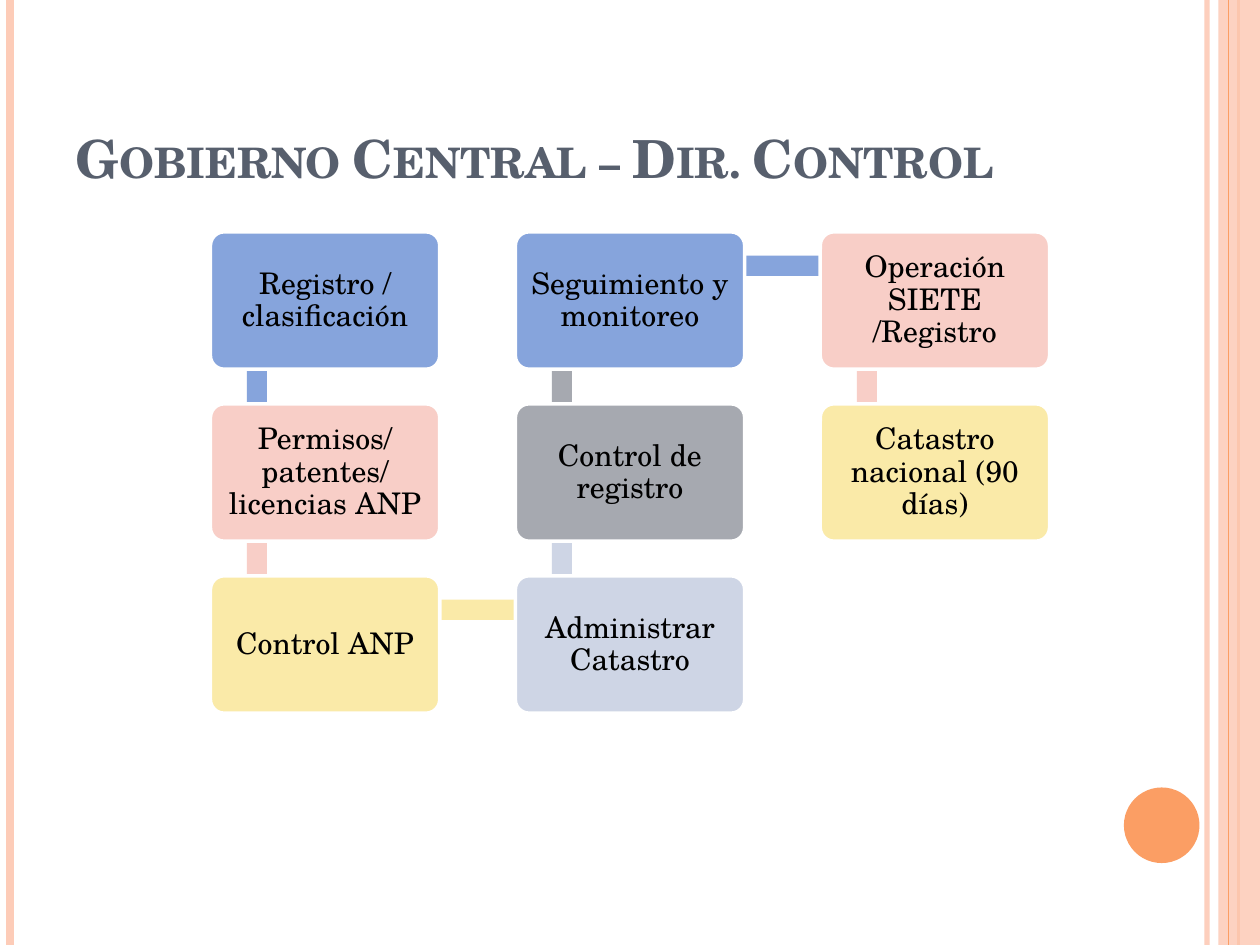
from lxml import etree
from pptx import Presentation
from pptx import util as u
from pptx.dml.color import RGBColor
from pptx.enum import shapes, text
from pptx.oxml.ns import qn

FONT = "TeX Gyre Schola"
PEACH = RGBColor(0xFD, 0xCC, 0xB8)
ORANGE = RGBColor(0xFB, 0x9E, 0x64)
SLATE = RGBColor(0x57, 0x5F, 0x6D)
BLACK = RGBColor(0, 0, 0)
WHITE = RGBColor(0xFF, 0xFF, 0xFF)
BLUE = RGBColor(0x86, 0xA4, 0xDC)
PINK = RGBColor(0xF8, 0xCE, 0xC7)
YELLOW = RGBColor(0xFA, 0xEA, 0xA8)
PALE = RGBColor(0xCE, 0xD5, 0xE5)
GREY = RGBColor(0xA6, 0xA9, 0xB0)

prs = Presentation()
prs.slide_width, prs.slide_height = u.Inches(10), u.Inches(7.5)
s = prs.slides.add_slide(prs.slide_layouts[6])


def add_filled(kind, x, y, w, h, color):
    """Add a flat preset shape without outline, measured in inches."""
    sp = s.shapes.add_shape(kind, *map(u.Inches, (x, y, w, h)))
    sp.shadow.inherit = False
    sp.fill.solid()
    sp.fill.fore_color.rgb = color
    sp.line.fill.background()
    return sp


def set_alpha(fill_parent, percent):
    """Make the solid fill directly under fill_parent partly transparent."""
    clr = fill_parent.find(qn("a:solidFill"))[0]
    etree.SubElement(clr, qn("a:alpha")).set("val", str(percent * 1000))


# Side stripes: the band lies between the two orange lines
for x, color, width, alpha in [(9.58, PEACH, 3, 93), (0.08, PEACH, 4.5, 100),
                               (9.83, ORANGE, 1.5, 100), (None, PEACH, 0, 87),
                               (9.75, ORANGE, 0.75, 100)]:
    if x is None:
        band = add_filled(shapes.MSO_SHAPE.RECTANGLE, 9.67, 0, 0.33, 7.5, color)
        set_alpha(band._element.spPr, alpha)
        continue
    line = s.shapes.add_connector(shapes.MSO_CONNECTOR.STRAIGHT, u.Inches(x), 0,
                                  u.Inches(x), prs.slide_height)
    line.line.color.rgb = color
    line.line.width = u.Pt(width)
    if alpha < 100:
        set_alpha(line.line._ln, alpha)
    etree.SubElement(line._element.spPr, qn("a:effectLst"))

add_filled(shapes.MSO_SHAPE.OVAL, 8.92, 6.25, 0.6, 0.6, ORANGE)

# Title in small capitals
title = s.shapes.add_textbox(*map(u.Inches, (0.5, 0.3, 8.17, 1.25)))
tf = title.text_frame
tf.word_wrap = True
tf.vertical_anchor = text.MSO_ANCHOR.BOTTOM
r = tf.paragraphs[0].add_run()
r.text = "Gobierno Central – Dir. Control"
r.font.name, r.font.size, r.font.bold = FONT, u.Pt(30), True
r.font.color.rgb = SLATE
r._r.get_or_add_rPr().set("cap", "small")

# Snaking process: (column, row, label, colour), each step linked to the next
STEPS = [
    (0, 0, "Registro / clasificación", BLUE),
    (0, 1, "Permisos/ patentes/ licencias ANP", PINK),
    (0, 2, "Control ANP", YELLOW),
    (1, 2, "Administrar Catastro", PALE),
    (1, 1, "Control de registro", GREY),
    (1, 0, "Seguimiento y monitoreo", BLUE),
    (2, 0, "Operación SIETE /Registro", PINK),
    (2, 1, "Catastro nacional (90 días)", YELLOW),
]
LEFT, TOP = 1.67, 1.84
COL, ROW = 2.42, 1.365
CARD_W, CARD_H = 1.82, 1.09
LINK_X, LINK_Y, LINK = 0.37, 0.27, 0.16

for i, (col, row, label, color) in enumerate(STEPS):
    x, y = LEFT + col * COL, TOP + row * ROW
    if i + 1 < len(STEPS):
        next_col, next_row = STEPS[i + 1][:2]
        link_x = x + LINK_X
        link_y = TOP + min(row, next_row) * ROW + LINK_Y
        if next_col > col:
            box = (link_x, link_y - LINK / 2, COL, LINK)
        else:
            box = (link_x - LINK / 2, link_y, LINK, ROW)
        add_filled(shapes.MSO_SHAPE.RECTANGLE, *box, color)

    card = add_filled(shapes.MSO_SHAPE.ROUNDED_RECTANGLE, x, y, CARD_W, CARD_H, color)
    card.adjustments[0] = 0.1
    card.line.color.rgb = WHITE
    card.line.width = u.Pt(2)
    tf = card.text_frame
    tf.word_wrap = True
    tf.vertical_anchor = text.MSO_ANCHOR.MIDDLE
    tf.margin_left = tf.margin_right = u.Inches(0.07)
    tf.margin_top = tf.margin_bottom = u.Inches(0.07)
    p = tf.paragraphs[0]
    p.alignment = text.PP_ALIGN.CENTER
    p.line_spacing = 0.9
    r = p.add_run()
    r.text = label
    r.font.name, r.font.size = FONT, u.Pt(17)
    r.font.color.rgb = BLACK

prs.save("out.pptx")
